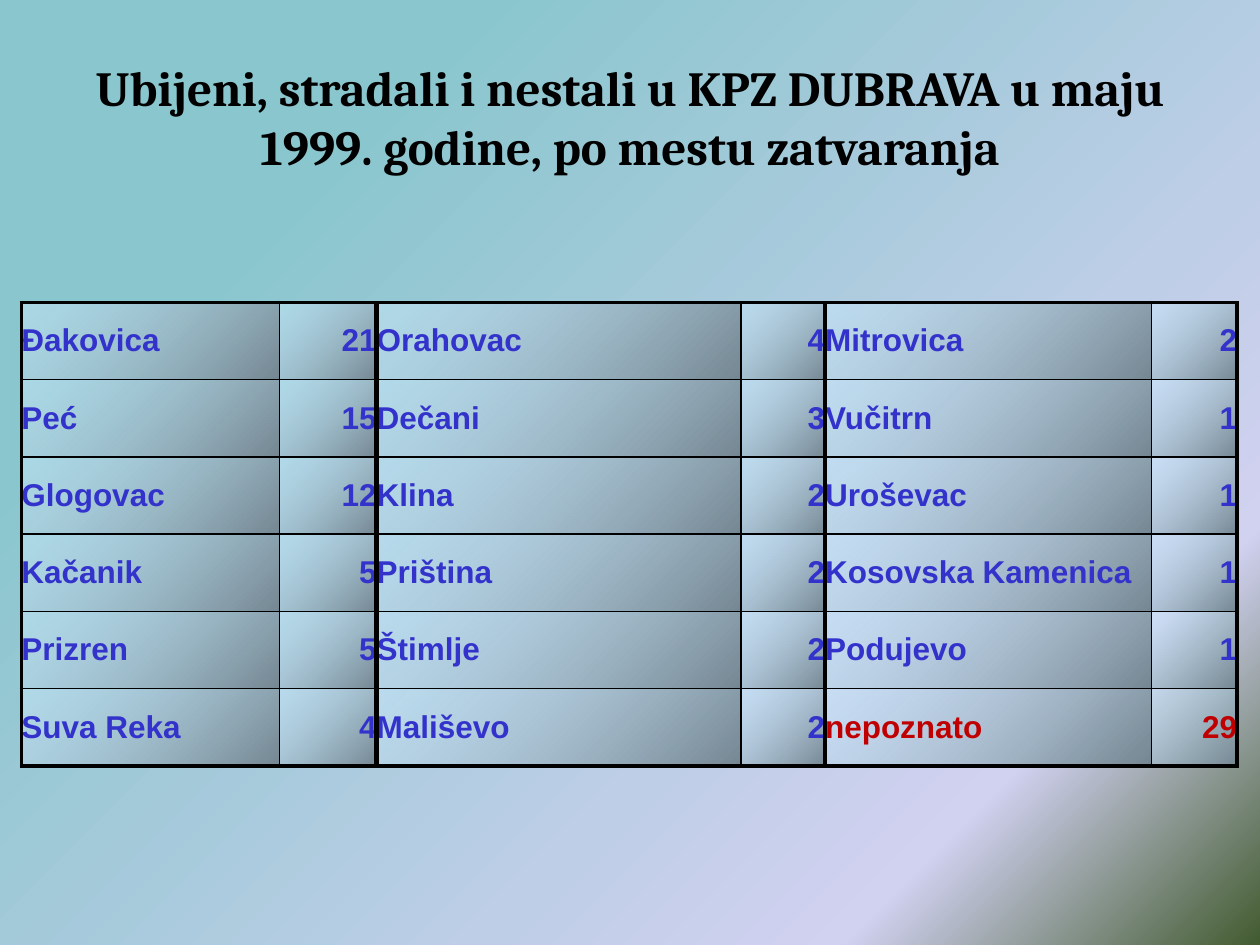
from lxml.etree import SubElement
from pptx import Presentation
from pptx.dml.color import RGBColor
from pptx.enum.text import MSO_ANCHOR, PP_ALIGN
from pptx.oxml.ns import qn
from pptx.util import Inches, Pt

BLACK = RGBColor(0x00, 0x00, 0x00)
BLUE = RGBColor(0x33, 0x33, 0xCC)
RED = RGBColor(0xC0, 0x00, 0x00)
TEAL = RGBColor(0x8A, 0xC6, 0xCD)
LAVENDER = RGBColor(0xD1, 0xD1, 0xF0)
DARK_GREEN = RGBColor(0x42, 0x5B, 0x30)
PALE_BLUE = RGBColor(0xCC, 0xEC, 0xFF)
SLATE = RGBColor(0x75, 0x87, 0x92)

BACKGROUND_STOPS = [(22, TEAL, 100), (81, LAVENDER, 91), (100, DARK_GREEN, 100)]
CELL_STOPS = [(0, PALE_BLUE, 50), (100, SLATE, 100)]

ROWS = [
    ("Đakovica", "21", "Orahovac", "4", "Mitrovica", "2"),
    ("Peć", "15", "Dečani", "3", "Vučitrn", "1"),
    ("Glogovac", "12", "Klina", "2", "Uroševac", "1"),
    ("Kačanik", "5", "Priština", "2", "Kosovska Kamenica", "1"),
    ("Prizren", "5", "Štimlje", "2", "Podujevo", "1"),
    ("Suva Reka", "4", "Mališevo", "2", "nepoznato", "29"),
]
COLUMN_WIDTHS = [2.05, 0.77, 2.89, 0.67, 2.59, 0.68]
VERTICAL_RULES = [2.25, 1, 3, 1, 3, 1, 2.25]
HORIZONTAL_RULES = [2.25, 1, 1, 1, 1, 1, 2.25]


def write_text(frame, text, font="Arial", size=18, color=BLUE, align=PP_ALIGN.LEFT):
    para = frame.paragraphs[0]
    para.alignment = align
    span = para.add_run()
    span.text = text
    span.font.name = font
    span.font.size = Pt(size)
    span.font.bold = True
    span.font.color.rgb = color


def add_gradient(parent, stops, index):
    gradient = SubElement(parent, qn("a:gradFill"), rotWithShape="1")
    parent.insert(index, gradient)
    stop_list = SubElement(gradient, qn("a:gsLst"))
    for position, color, opacity in stops:
        stop = SubElement(stop_list, qn("a:gs"), pos=str(position * 1000))
        tint = SubElement(stop, qn("a:srgbClr"), val=str(color))
        if opacity < 100:
            SubElement(tint, qn("a:alpha"), val=str(opacity * 1000))
    SubElement(gradient, qn("a:lin"), ang=str(45 * 60000), scaled="1")


deck = Presentation()
deck.slide_width = Inches(10)
deck.slide_height = Inches(7.5)
page = deck.slides.add_slide(deck.slide_layouts[5])

page.background.fill.solid()
background = page.element.find(".//" + qn("p:bgPr"))
background.remove(background.find(qn("a:solidFill")))
add_gradient(background, BACKGROUND_STOPS, 0)

title = page.shapes.title
title.left, title.top = Inches(0.5), Inches(0.3)
title.width, title.height = Inches(9), Inches(1.25)
title.text_frame.vertical_anchor = MSO_ANCHOR.MIDDLE
write_text(
    title.text_frame,
    "Ubijeni, stradali i nestali u KPZ DUBRAVA u maju 1999. godine, po mestu zatvaranja",
    font="Cambria", size=28, color=BLACK, align=PP_ALIGN.CENTER,
)

table = page.shapes.add_table(
    len(ROWS), len(COLUMN_WIDTHS),
    Inches(0.17), Inches(2.4), Inches(sum(COLUMN_WIDTHS)), Inches(3.68),
).table
table.first_row = False
table.horz_banding = False
for column, width in zip(table.columns, COLUMN_WIDTHS):
    column.width = Inches(width)

for row_index, row in enumerate(ROWS):
    for column_index, text in enumerate(row):
        cell = table.cell(row_index, column_index)
        cell.vertical_anchor = MSO_ANCHOR.MIDDLE
        cell.margin_left = cell.margin_right = 0
        cell.margin_top = cell.margin_bottom = 0
        write_text(
            cell.text_frame, text,
            color=RED if "nepoznato" in row[column_index - 1:column_index + 1] else BLUE,
            align=PP_ALIGN.RIGHT if column_index % 2 else PP_ALIGN.LEFT,
        )
        properties = cell._tc.get_or_add_tcPr()
        borders = {
            "a:lnL": VERTICAL_RULES[column_index],
            "a:lnR": VERTICAL_RULES[column_index + 1],
            "a:lnT": HORIZONTAL_RULES[row_index],
            "a:lnB": HORIZONTAL_RULES[row_index + 1],
        }
        for side, weight in borders.items():
            line = SubElement(properties, qn(side), w=str(Pt(weight)))
            paint = SubElement(line, qn("a:solidFill"))
            SubElement(paint, qn("a:srgbClr"), val=str(BLACK))
        add_gradient(properties, CELL_STOPS, len(borders))

deck.save("out.pptx")
